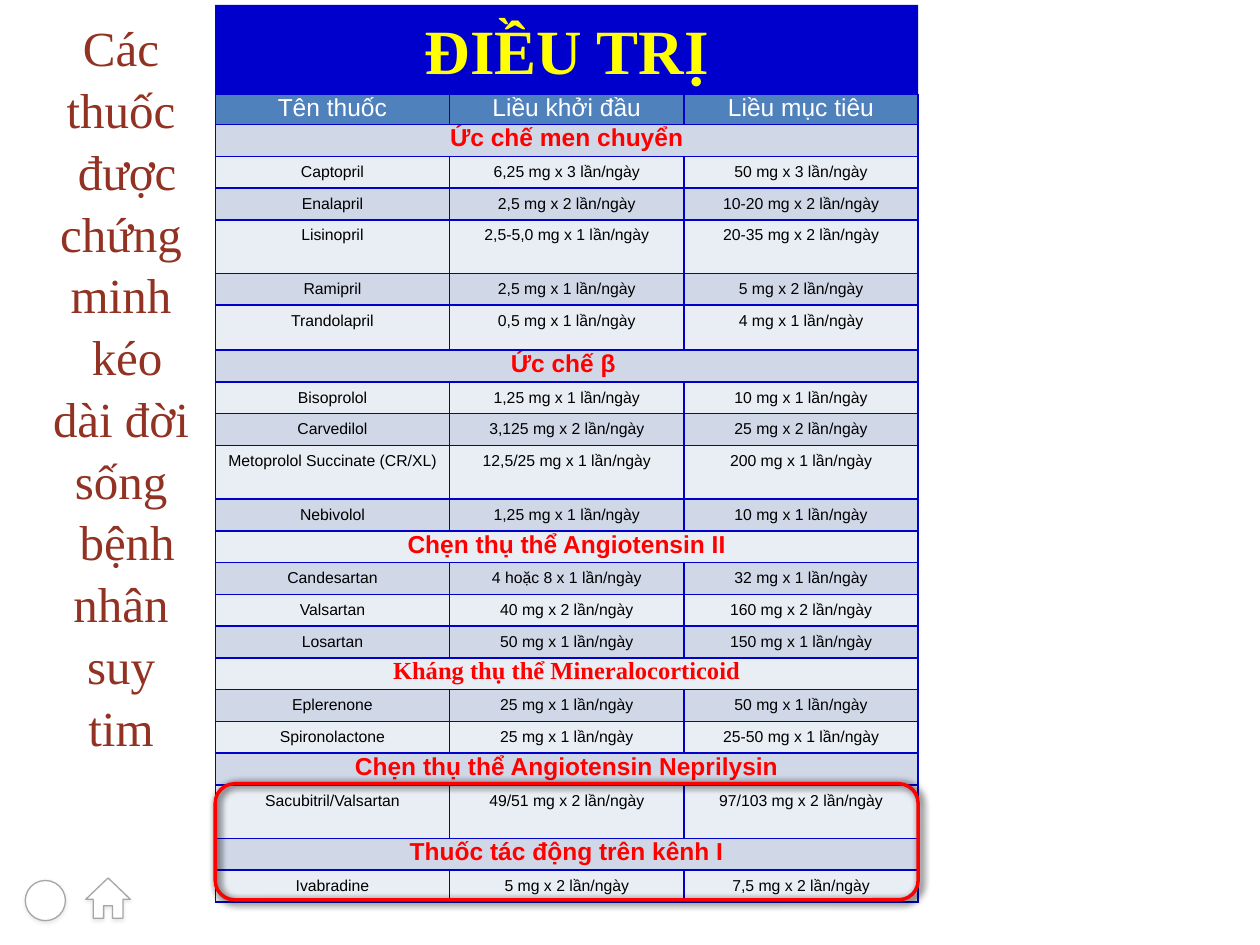
from lxml import etree
from pptx import Presentation
from pptx.dml.color import RGBColor
from pptx.enum.shapes import MSO_SHAPE as Shape
from pptx.enum.text import MSO_ANCHOR as Anchor, PP_ALIGN as Align
from pptx.oxml.ns import qn
from pptx.util import Cm, Pt

SERIF, SANS = "Times New Roman", "Arial"
BLUE, RED, WHITE = "0000CC", "FF0000", "FFFFFF"
BANDS = ("E9EDF4", "D0D8E8")
HEADINGS = ("Tên thuốc", "Liều khởi đầu", "Liều mục tiêu")
ROW_HEIGHT, HEADING_HEIGHT = 0.64, 0.61
TALL_ROWS = {"Lisinopril": 1.08, "Trandolapril": 0.91,
             "Metoprolol Succinate (CR/XL)": 1.08, "Sacubitril/Valsartan": 1.08}
DRUG_GROUPS = {
    "Ức chế men chuyển": [
        ("Captopril", "6,25 mg x 3 lần/ngày", "50 mg x 3 lần/ngày"),
        ("Enalapril", "2,5 mg x 2 lần/ngày", "10-20 mg x 2 lần/ngày"),
        ("Lisinopril", "2,5-5,0 mg x 1 lần/ngày", "20-35 mg x 2 lần/ngày"),
        ("Ramipril", "2,5 mg x 1 lần/ngày", "5 mg x 2 lần/ngày"),
        ("Trandolapril", "0,5 mg x 1 lần/ngày", "4 mg x 1 lần/ngày")],
    "Ức chế β ": [
        ("Bisoprolol", "1,25 mg x 1 lần/ngày", "10 mg x 1 lần/ngày"),
        ("Carvedilol", "3,125 mg x 2 lần/ngày", "25 mg x 2 lần/ngày"),
        ("Metoprolol Succinate (CR/XL)", "12,5/25 mg x 1 lần/ngày", "200 mg x 1 lần/ngày"),
        ("Nebivolol", "1,25 mg x 1 lần/ngày", "10 mg x 1 lần/ngày")],
    "Chẹn thụ thể Angiotensin II": [
        ("Candesartan", "4 hoặc 8 x 1 lần/ngày", "32 mg x 1 lần/ngày"),
        ("Valsartan", "40 mg x 2 lần/ngày", "160 mg x 2 lần/ngày"),
        ("Losartan", "50 mg x 1 lần/ngày", "150 mg x 1 lần/ngày")],
    "Kháng thụ thể Mineralocorticoid": [
        ("Eplerenone", "25 mg x 1 lần/ngày", "50 mg x 1 lần/ngày"),
        ("Spironolactone", "25 mg x 1 lần/ngày", "25-50 mg x 1 lần/ngày")],
    "Chẹn thụ thể Angiotensin Neprilysin": [
        ("Sacubitril/Valsartan", "49/51 mg x 2 lần/ngày", "97/103 mg x 2 lần/ngày")],
    "Thuốc tác động trên kênh I": [
        ("Ivabradine", "5 mg x 2 lần/ngày", "7,5 mg x 2 lần/ngày")],
}


def rgb(hex_code):
    """Turn a hex string into a colour."""
    return RGBColor.from_string(hex_code)


def write(frame, text, size=9, font=SANS, color="000000", bold=False, spacing=1.0):
    """Put one centred, formatted paragraph into a text frame."""
    paragraph = frame.paragraphs[0]
    paragraph.text = text
    paragraph.alignment = Align.CENTER
    paragraph.line_spacing = spacing
    for run in paragraph.runs:
        run.font.size, run.font.name, run.font.bold = Pt(size), font, bold
        run.font.color.rgb = rgb(color)


def paint(shape, fill=None, line=None, width=0.75):
    """Set fill and outline, and drop the theme shadow."""
    shape.shadow.inherit = False
    if fill:
        shape.fill.solid()
        shape.fill.fore_color.rgb = rgb(fill)
    else:
        shape.fill.background()
    if line:
        shape.line.color.rgb = rgb(line)
        shape.line.width = Pt(width)
    else:
        shape.line.fill.background()


def cast_shadow(shape, color, opacity, blur, distance, angle):
    """Give a shape an outer shadow."""
    effects = shape.element.spPr.find(qn("a:effectLst"))
    shadow = etree.SubElement(effects, qn("a:outerShdw"), blurRad=str(Pt(blur)),
                              dist=str(Pt(distance)), dir=str(angle * 60000), rotWithShape="0")
    shade = etree.SubElement(shadow, qn("a:srgbClr"), val=color)
    etree.SubElement(shade, qn("a:alpha"), val=str(opacity * 1000))


def border(cell, color, width):
    """Draw all four borders of a table cell."""
    properties = cell._tc.get_or_add_tcPr()
    for position, side in enumerate(("a:lnL", "a:lnR", "a:lnT", "a:lnB")):
        edge = etree.Element(qn(side), w=str(Pt(width)))
        fill = etree.SubElement(edge, qn("a:solidFill"))
        etree.SubElement(fill, qn("a:srgbClr"), val=color)
        properties.insert(position, edge)


def add_navigation(slide, left, top):
    """Place the round button and the home button."""
    button = slide.shapes.add_shape(Shape.OVAL, Cm(left), Cm(top + 0.05), Cm(0.81), Cm(0.81))
    right_half = [(0.45, 0.43), (0.3, 0.43), (0.3, 0.81), (0.09, 0.81), (0.09, 0.56)]
    outline = right_half + [(-x, y) for x, y in reversed(right_half)]
    roof_x = left + 1.67
    builder = slide.shapes.build_freeform(Cm(roof_x), Cm(top))
    builder.add_line_segments([(Cm(roof_x + x), Cm(top + y)) for x, y in outline])
    home = builder.convert_to_shape()
    for icon in (button, home):
        paint(icon, WHITE, "A6A6A6")
        cast_shadow(icon, "474749", 12, 2, 1, 90)


def add_side_title(slide, left, top, width, height):
    """Place the narrow title beside the table."""
    frame = slide.shapes.add_textbox(Cm(left), Cm(top), Cm(width), Cm(height)).text_frame
    frame.word_wrap = True
    frame.vertical_anchor = Anchor.BOTTOM
    frame.margin_left = frame.margin_right = frame.margin_top = frame.margin_bottom = 0
    write(frame, "Các thuốc\v được chứng minh\v kéo dài đời sống\v bệnh nhân suy tim",
          size=28, font=SERIF, color="923222", spacing=1.05)


def add_banner(slide, left, top, width, height):
    """Place the heading above the table."""
    banner = slide.shapes.add_shape(Shape.RECTANGLE, Cm(left), Cm(top), Cm(width), Cm(height))
    paint(banner, BLUE)
    frame = banner.text_frame
    frame.margin_top = frame.margin_bottom = Cm(0.13)
    frame.vertical_anchor = Anchor.MIDDLE
    write(frame, "ĐIỀU TRỊ", size=36, font=SERIF, color="FFFF00", bold=True)


def fill_cell(cell, text, fill, top_margin=0, **text_format):
    """Write and colour one table cell."""
    cell.margin_left = cell.margin_right = Cm(0.18)
    cell.margin_top, cell.margin_bottom = Cm(top_margin), 0
    cell.fill.solid()
    cell.fill.fore_color.rgb = rgb(fill)
    border(cell, BLUE, 1)
    write(cell.text_frame, text, **text_format)


def add_dose_table(slide, left, top, width):
    """Place the drug table with its group headings."""
    lines = [HEADINGS]
    for group, drugs in DRUG_GROUPS.items():
        lines += [(group, "", ""), *drugs]
    heights = [HEADING_HEIGHT] + [TALL_ROWS.get(line[0], ROW_HEIGHT) for line in lines[1:]]
    doses = slide.shapes.add_table(len(lines), len(HEADINGS), Cm(left), Cm(top),
                                   Cm(width), Cm(sum(heights))).table
    for number, (line, height) in enumerate(zip(lines, heights)):
        doses.rows[number].height = Cm(height)
        band = BANDS[number % 2]
        if number == 0:
            style = dict(fill="4F81BD", size=14, color=WHITE)
        elif line[0] in DRUG_GROUPS:
            font = SERIF if line[0].startswith("Kháng") else SANS
            style = dict(fill=band, size=14, font=font, color=RED, bold=True)
            doses.cell(number, 0).merge(doses.cell(number, len(HEADINGS) - 1))
        else:
            style = dict(fill=band, top_margin=0.14)
        for column, text in enumerate(line):
            fill_cell(doses.cell(number, column), text, **style)


def add_highlight(slide, left, top, width, height):
    """Place the red frame around the last drugs."""
    frame = slide.shapes.add_shape(Shape.ROUNDED_RECTANGLE, Cm(left), Cm(top),
                                   Cm(width), Cm(height))
    paint(frame, line=RED, width=2)
    cast_shadow(frame, "000000", 100, 5, 1.4, 45)


def main():
    """Build and save the slide."""
    deck = Presentation()
    deck.slide_width, deck.slide_height = Cm(25.4), Cm(19.05)
    slide = deck.slides.add_slide(deck.slide_layouts[6])
    left, width = 4.34, 14.17
    add_navigation(slide, 0.51, 17.7)
    add_side_title(slide, 1.02, 0.64, 2.84, 14.6)
    add_dose_table(slide, left, 1.9, width)
    add_banner(slide, left, 0.1, width, 1.8)
    add_highlight(slide, left, 15.8, width, 2.34)
    deck.save("out.pptx")


if __name__ == "__main__":
    main()
